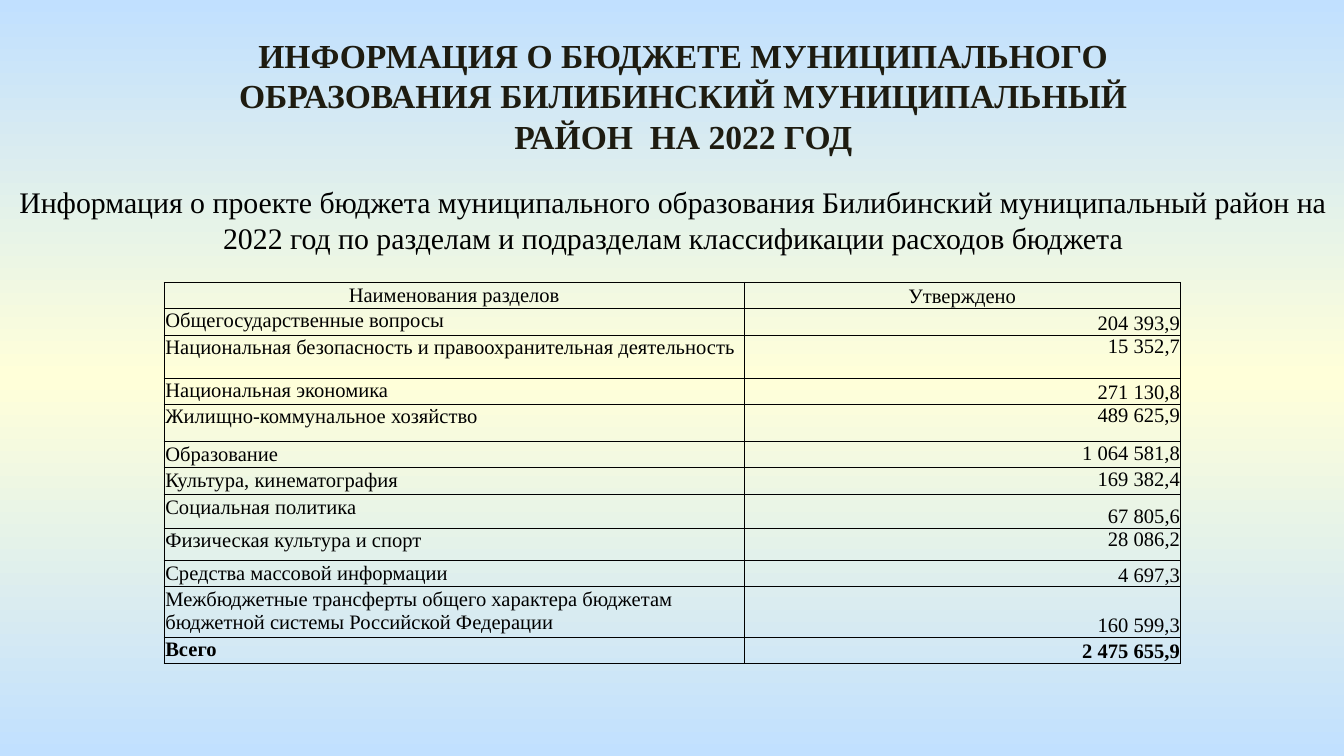
from copy import deepcopy
from dataclasses import dataclass

from lxml.etree import SubElement
from pptx import Presentation
from pptx.dml.color import RGBColor
from pptx.enum.text import MSO_ANCHOR, PP_ALIGN
from pptx.oxml.ns import qn
from pptx.util import Inches, Pt


@dataclass(frozen=True)
class Theme:
    font: str = "Times New Roman"
    title_size: float = 18
    subtitle_size: float = 16
    table_size: float = 11
    border_width: float = 0.5
    title_color: str = "1E1C11"
    text_color: str = "000000"
    sky: str = "C1E0FF"
    cream: str = "FFFFD9"


THEME = Theme()
WIDTH = 10
HEIGHT = WIDTH * 9 / 16
NAME_SHARE = 4.32 / 7.56
TOP, BOTTOM = MSO_ANCHOR.TOP, MSO_ANCHOR.BOTTOM

TITLE = ("ИНФОРМАЦИЯ О БЮДЖЕТЕ МУНИЦИПАЛЬНОГО ОБРАЗОВАНИЯ "
         "БИЛИБИНСКИЙ МУНИЦИПАЛЬНЫЙ РАЙОН  НА 2022 ГОД")
SUBTITLE = ("Информация о проекте бюджета муниципального образования "
            "Билибинский муниципальный район на 2022 год по разделам "
            "и подразделам классификации расходов бюджета")
HEADER = ("Наименования разделов", "Утверждено")
HEADER_HEIGHT = 0.16
# Section, approved amount, least row height in inches, anchor of the amount
SECTIONS = [
    ("Общегосударственные вопросы", "204 393,9", 0.2, BOTTOM),
    ("Национальная безопасность и правоохранительная деятельность",
     "15 352,7", 0.32, TOP),
    ("Национальная экономика", "271 130,8", 0.19, BOTTOM),
    ("Жилищно-коммунальное хозяйство", "489 625,9", 0.28, TOP),
    ("Образование", "1 064 581,8", 0.19, TOP),
    ("Культура, кинематография", "169 382,4", 0.2, TOP),
    ("Социальная политика", "67 805,6", 0.25, BOTTOM),
    ("Физическая культура и спорт", "28 086,2", 0.24, TOP),
    ("Средства массовой информации", "4 697,3", 0.19, BOTTOM),
    ("Межбюджетные трансферты общего характера бюджетам "
     "бюджетной системы Российской Федерации", "160 599,3", 0.19, BOTTOM),
    ("Всего", "2 475 655,9", 0.19, BOTTOM),
]


def paint_background(page):
    fill = page.background.fill
    fill.gradient()
    fill.gradient_angle = 90
    stop_list = page.element.find(".//" + qn("a:gsLst"))
    stop_list.insert(1, deepcopy(stop_list[0]))
    colors = (THEME.sky, THEME.cream, THEME.sky)
    for stop, position, color in zip(fill.gradient_stops, (0, 0.5, 1), colors):
        stop.position = position
        stop.color.rgb = RGBColor.from_string(color)


def write(frame, text, size, color, align, bold=False):
    para = frame.paragraphs[0]
    para.text = text
    para.alignment = align
    para.font.name = THEME.font
    para.font.size = Pt(size)
    para.font.bold = bold
    para.font.color.rgb = RGBColor.from_string(color)


def add_heading(page, box, text, size, color, bold=False):
    frame = page.shapes.add_textbox(*map(Inches, box)).text_frame
    frame.word_wrap = True
    write(frame, text, size, color, PP_ALIGN.CENTER, bold)


def style_cell(cell, inset, anchor):
    """Set margins, anchor and borders, and leave the cell unfilled."""
    cell.margin_left = cell.margin_right = cell.margin_top = Inches(inset)
    cell.margin_bottom = 0
    cell.vertical_anchor = anchor
    properties = cell._tc.get_or_add_tcPr()
    for side in ("a:lnL", "a:lnR", "a:lnT", "a:lnB"):
        line = SubElement(properties, qn(side), w=str(Pt(THEME.border_width)))
        solid = SubElement(line, qn("a:solidFill"))
        SubElement(solid, qn("a:srgbClr"), val=THEME.text_color)
    cell.fill.background()


def fill_cell(cell, text, align, anchor, inset, bold=False):
    style_cell(cell, inset, anchor)
    write(cell.text_frame, text, THEME.table_size, THEME.text_color, align, bold)


def add_budget_table(page, box):
    """Place the table; rows too low for their text grow when drawn."""
    left, top, width, height = map(Inches, box)
    row_heights = [HEADER_HEIGHT] + [section[2] for section in SECTIONS]
    holder = page.shapes.add_table(
        len(row_heights), len(HEADER), left, top, width, height)
    table = holder.table
    table.first_row = table.horz_banding = False
    for column, share in zip(table.columns, (NAME_SHARE, 1 - NAME_SHARE)):
        column.width = round(width * share)
    for row, row_height in zip(table.rows, row_heights):
        row.height = Inches(row_height)
    holder.height = height

    for column, anchor in enumerate((MSO_ANCHOR.MIDDLE, BOTTOM)):
        fill_cell(table.cell(0, column), HEADER[column],
                  PP_ALIGN.CENTER, anchor, 0.01)
    for row, (name, amount, _, anchor) in enumerate(SECTIONS, start=1):
        bold = row == len(SECTIONS)
        fill_cell(table.cell(row, 0), name, PP_ALIGN.LEFT, TOP, 0.01, bold)
        fill_cell(table.cell(row, 1), amount, PP_ALIGN.RIGHT, anchor, 0, bold)


def main():
    deck = Presentation()
    deck.slide_width, deck.slide_height = Inches(WIDTH), Inches(HEIGHT)
    page = deck.slides.add_slide(deck.slide_layouts[6])
    paint_background(page)
    add_heading(page, (1.22, 0.21, 7.73, 1.01), TITLE,
                THEME.title_size, THEME.title_color, bold=True)
    add_heading(page, (0.01, 1.32, WIDTH, 0.64), SUBTITLE,
                THEME.subtitle_size, THEME.text_color)
    add_budget_table(page, (1.22, 2.1, 7.56, 2.81))
    deck.save("out.pptx")


if __name__ == "__main__":
    main()
